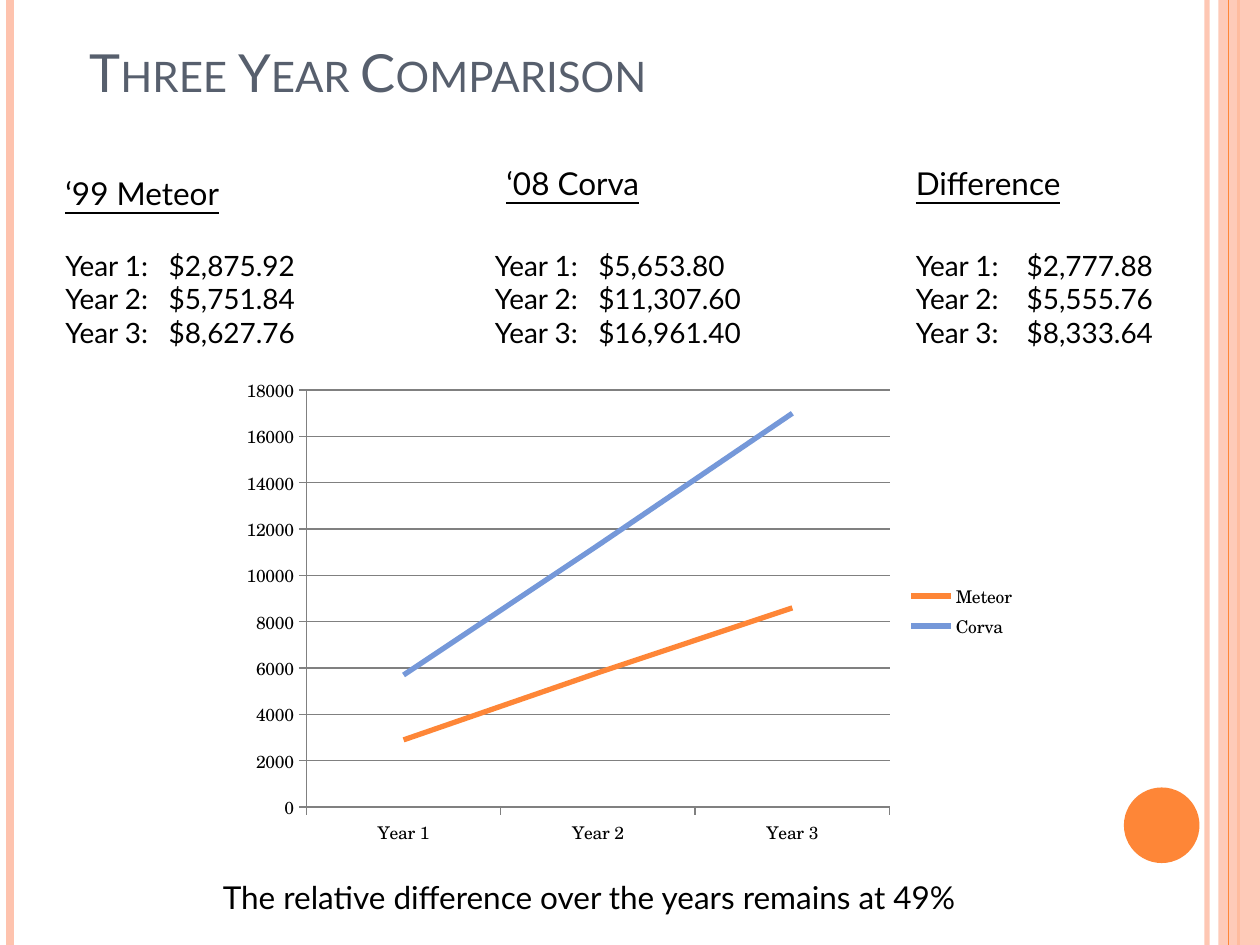
from lxml.etree import SubElement
from pptx import Presentation
from pptx.chart.data import CategoryChartData
from pptx.dml.color import RGBColor
from pptx.enum.chart import XL_CHART_TYPE, XL_LEGEND_POSITION, XL_TICK_MARK
from pptx.enum.shapes import MSO_CONNECTOR, MSO_SHAPE
from pptx.enum.text import MSO_ANCHOR, MSO_AUTO_SIZE, PP_ALIGN
from pptx.oxml.ns import qn
from pptx.util import Inches, Pt

WIDTH, HEIGHT = 10, 7.5
TEXT_FONT, CHART_FONT = "Lato", "TeX Gyre Schola"
ORANGE, PEACH, BLUE, SLATE = "FE8637", "FEC3AE", "7598D9", "575F6D"
BLACK, GRAY = "000000", "808080"
YEARS = ["Year 1", "Year 2", "Year 3"]

# heading, heading box (left, top, width), list box (left, width), tab, amounts
COLUMNS = [
    ("‘99 Meteor", (0.42, 1.33, 1.67), (0.42, 2.83), 0.82,
     ["$2,875.92", "$5,751.84", "$8,627.76"]),
    ("‘08 Corva", (3.92, 1.25, 1.5), (3.83, 2.42), 0.82,
     ["$5,653.80", "$11,307.60", "$16,961.40"]),
    ("Difference", (7.17, 1.25, 2.17), (7.17, 2.42), 0.88,
     ["$2,777.88", "$5,555.76", "$8,333.64"]),
]
SERIES = [("Meteor", [2900, 5800, 8600], ORANGE),
          ("Corva", [5700, 11300, 17000], BLUE)]


def color(hex_code):
    return RGBColor.from_string(hex_code)


def set_alpha(fill_element, percent):
    color_element = next(fill_element.iter(qn("a:srgbClr")))
    SubElement(color_element, qn("a:alpha"), val=str(percent * 1000))


def write_text(frame, lines, size=18, hex_code=BLACK, underline=False,
               align=PP_ALIGN.LEFT, small_caps=False, tab=None):
    for index, line in enumerate(lines):
        paragraph = frame.paragraphs[0] if index == 0 else frame.add_paragraph()
        paragraph.alignment = align
        if tab:
            tabs = SubElement(paragraph._p.get_or_add_pPr(), qn("a:tabLst"))
            SubElement(tabs, qn("a:tab"), pos=str(Inches(tab)), algn="l")
        run = paragraph.add_run()
        run.text = line
        run.font.name = TEXT_FONT
        run.font.size = Pt(size)
        run.font.color.rgb = color(hex_code)
        if underline:
            run.font.underline = True
        if small_caps:
            run._r.get_or_add_rPr().set("cap", "small")


def add_text(slide, left, top, width, height, lines, **text_format):
    box = slide.shapes.add_textbox(*map(Inches, (left, top, width, height)))
    box.text_frame.word_wrap = True
    box.text_frame.auto_size = MSO_AUTO_SIZE.SHAPE_TO_FIT_TEXT
    write_text(box.text_frame, lines, **text_format)


def add_stripe(slide, x, hex_code, weight, alpha=None):
    stripe = slide.shapes.add_connector(
        MSO_CONNECTOR.STRAIGHT, Inches(x), 0, Inches(x), Inches(HEIGHT))
    stripe.line.color.rgb = color(hex_code)
    stripe.line.width = Pt(weight)
    if alpha:
        set_alpha(stripe.line._ln, alpha)
    SubElement(stripe._element.spPr, qn("a:effectLst"))


def add_plain_shape(slide, kind, left, top, width, height, hex_code, alpha=None):
    shape = slide.shapes.add_shape(kind, *map(Inches, (left, top, width, height)))
    shape.shadow.inherit = False
    shape.fill.solid()
    shape.fill.fore_color.rgb = color(hex_code)
    shape.line.fill.background()
    if alpha:
        set_alpha(shape._element.spPr, alpha)


def add_frame(slide):
    add_stripe(slide, 9.58, PEACH, 3, alpha=93)
    add_stripe(slide, 0.08, PEACH, 4.5)
    add_stripe(slide, 9.83, ORANGE, 1.5)
    add_plain_shape(slide, MSO_SHAPE.RECTANGLE, 9.67, 0, WIDTH - 9.67, HEIGHT,
                    PEACH, alpha=87)
    add_stripe(slide, 9.75, ORANGE, 0.75)
    add_plain_shape(slide, MSO_SHAPE.OVAL, 8.92, 6.25, 0.6, 0.6, ORANGE)


def format_title(slide, text):
    title = slide.shapes.title
    title.left, title.top, title.width, title.height = map(
        Inches, (0.42, 0.17, 5, 0.7))
    title.text_frame.auto_size = MSO_AUTO_SIZE.NONE
    title.text_frame.vertical_anchor = MSO_ANCHOR.BOTTOM
    write_text(title.text_frame, [text], size=30, hex_code=SLATE,
               align=PP_ALIGN.CENTER, small_caps=True)


def style_line(line, hex_code, weight):
    line.color.rgb = color(hex_code)
    line.width = Pt(weight)


def add_cost_chart(slide):
    data = CategoryChartData()
    data.categories = YEARS
    for name, values, _ in SERIES:
        data.add_series(name, values)
    chart = slide.shapes.add_chart(
        XL_CHART_TYPE.LINE, *map(Inches, (1.83, 2.92, 6.33, 3.86)), data).chart
    chart.has_title = False
    chart.font.name = CHART_FONT
    chart.font.size = Pt(10)
    chart.font.color.rgb = color(BLACK)

    # Axes, grid and legend
    for axis in (chart.category_axis, chart.value_axis):
        axis.major_tick_mark = XL_TICK_MARK.OUTSIDE
        style_line(axis.format.line, GRAY, 0.75)
    chart.value_axis.minimum_scale = 0
    chart.value_axis.maximum_scale = 18000
    chart.value_axis.major_unit = 2000
    style_line(chart.value_axis.major_gridlines.format.line, GRAY, 0.75)
    chart.has_legend = True
    chart.legend.position = XL_LEGEND_POSITION.RIGHT
    chart.legend.include_in_layout = False

    # Series
    chart.plots[0].vary_by_categories = False
    for series, (_, _, hex_code) in zip(chart.plots[0].series, SERIES):
        series.smooth = False
        style_line(series.format.line, hex_code, 3)


def main():
    presentation = Presentation()
    presentation.slide_width = Inches(WIDTH)
    presentation.slide_height = Inches(HEIGHT)
    slide = presentation.slides.add_slide(presentation.slide_layouts[5])

    add_frame(slide)
    format_title(slide, "Three Year Comparison")
    add_cost_chart(slide)

    # Cost columns
    for heading, (left, top, width), (list_left, list_width), tab, amounts in COLUMNS:
        add_text(slide, left, top, width, 0.4, [heading], underline=True)
        lines = [f"{year}:\t{amount}" for year, amount in zip(YEARS, amounts)]
        add_text(slide, list_left, 1.92, list_width, 0.91, lines, size=16, tab=tab)

    # Conclusion
    add_text(slide, 1.67, 6.92, 6.42, 0.4,
             ["The relative difference over the years remains at 49%"])
    presentation.save("out.pptx")


if __name__ == "__main__":
    main()
